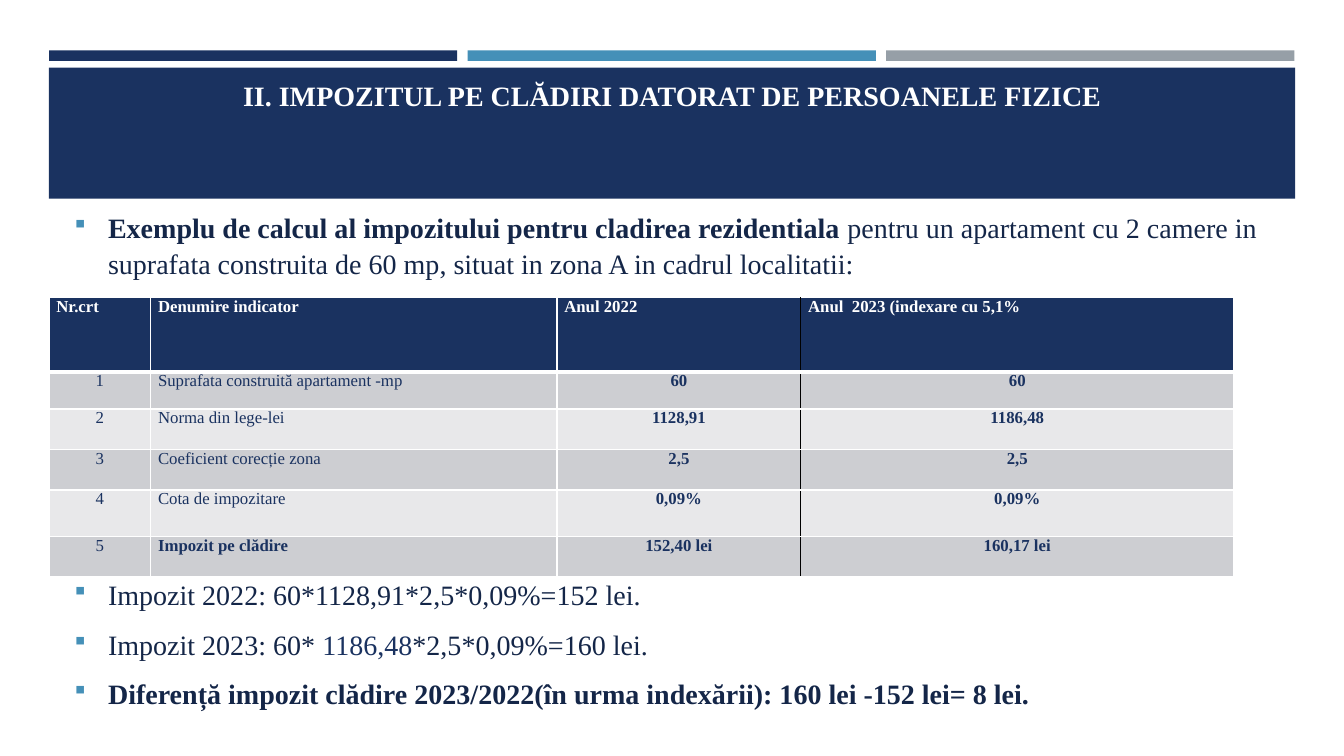
"""Builds a slide with a worked example of the residential building tax."""
from lxml.etree import SubElement
from pptx import Presentation
from pptx.dml.color import RGBColor
from pptx.enum.shapes import MSO_SHAPE as SHAPE
from pptx.enum.text import MSO_ANCHOR as ANCHOR, PP_ALIGN as ALIGN
from pptx.oxml.ns import qn
from pptx.util import Pt

FONT = "Times New Roman"
NAVY, BLUE, GREY, INK = "1A3260", "4590B8", "969FA7", "142648"
WHITE, BLACK = "FFFFFF", "000000"
BANDS = ["CDCED2", "E8E8EA"]

TITLE = [[("II. IMPOZITUL PE CLĂDIRI DATORAT DE PERSOANELE FIZICE", WHITE, True)]]
INTRO = [[
    ("Exemplu de calcul al impozitului pentru cladirea rezidentiala ", INK, True),
    ("pentru un apartament cu 2 camere in suprafata construita de 60 mp, "
     "situat in zona A in cadrul localitatii:", INK, False),
]]
RESULTS = [
    [("Impozit 2022: 60*1128,91*2,5*0,09%=152 lei.", INK, False)],
    [("Impozit 2023: 60* ", INK, False), ("1186,48", NAVY, False),
     ("*2,5*0,09%=160 lei.", INK, False)],
    [("Diferență impozit clădire 2023/2022(în urma indexării): "
      "160 lei -152 lei= 8 lei.", INK, True)],
]
ROWS = [
    ("Nr.crt", "Denumire indicator", "Anul 2022", "Anul  2023 (indexare cu 5,1%"),
    ("1", "Suprafata construită apartament -mp", "60", "60"),
    ("2", "Norma din lege-lei", "1128,91", "1186,48"),
    ("3", "Coeficient corecție zona", "2,5", "2,5"),
    ("4", "Cota de impozitare", "0,09%", "0,09%"),
    ("5", "Impozit pe clădire", "152,40 lei", "160,17 lei"),
]
COL_WIDTHS = [72.7, 290.2, 174.2, 309.2]
ROW_HEIGHTS = [53, 26.6, 29, 28.8, 33, 28.8]
LEFT, STRIP_WIDTH, STRIP_STEP = 35, 291.6, 299
TEXT_LEFT, TEXT_WIDTH = 46.1, 868.3


def rgb(color):
    return RGBColor.from_string(color)


def style(r, size, color, bold):
    r.font.name, r.font.size, r.font.bold = FONT, Pt(size), bold
    r.font.color.rgb = rgb(color)


def add_bar(s, left, top, width, height, color):
    sp = s.shapes.add_shape(SHAPE.RECTANGLE, Pt(left), Pt(top), Pt(width), Pt(height))
    sp.shadow.inherit = False
    sp.fill.solid()
    sp.fill.fore_color.rgb = rgb(color)
    sp.line.fill.background()


def add_bullet(p):
    pPr = p._p.get_or_add_pPr()
    pPr.set("marL", str(Pt(24)))
    pPr.set("indent", str(-Pt(24)))
    SubElement(SubElement(pPr, qn("a:buClr")), qn("a:srgbClr"), val=BLUE)
    SubElement(pPr, qn("a:buSzPct"), val="92000")
    SubElement(pPr, qn("a:buFont"), typeface="Wingdings")
    SubElement(pPr, qn("a:buChar"), char="§")


def add_text(s, top, height, paragraphs, bulleted=True):
    tf = s.shapes.add_textbox(Pt(TEXT_LEFT), Pt(top), Pt(TEXT_WIDTH), Pt(height)).text_frame
    tf.word_wrap = True
    for i, runs in enumerate(paragraphs):
        p = tf.add_paragraph() if i else tf.paragraphs[0]
        p.line_spacing, p.space_after = 1.06, Pt(10)
        if bulleted:
            add_bullet(p)
        else:
            p.alignment = ALIGN.CENTER
        for text, color, bold in runs:
            r = p.add_run()
            r.text = text
            style(r, 20, color, bold)


def add_border(cell, side, color, width):
    ln = SubElement(cell._tc.get_or_add_tcPr(), qn("a:ln" + side), w=str(Pt(width)))
    SubElement(SubElement(ln, qn("a:solidFill")), qn("a:srgbClr"), val=color)


def fill_cell(cell, row, col, text):
    header = row == 0
    cell.margin_left = cell.margin_right = Pt(5.2)
    cell.margin_top = cell.margin_bottom = 0
    cell.vertical_anchor = ANCHOR.TOP
    add_border(cell, "L", BLACK if col == 3 else WHITE, 1)
    add_border(cell, "R", BLACK if col == 2 else WHITE, 1)
    add_border(cell, "T", WHITE, 1)
    add_border(cell, "B", WHITE, 3 if header else 1)
    cell.fill.solid()
    cell.fill.fore_color.rgb = rgb(NAVY if header else BANDS[(row - 1) % 2])
    p = cell.text_frame.paragraphs[0]
    p.text = text
    p.alignment = ALIGN.JUSTIFY if header or col == 1 else ALIGN.CENTER
    total = row == len(ROWS) - 1 and col == 1
    style(p.runs[0], 12, WHITE if header else NAVY, header or col >= 2 or total)


def add_tax_table(s):
    table = s.shapes.add_table(len(ROWS), len(COL_WIDTHS), Pt(LEFT), Pt(212.6),
                               Pt(sum(COL_WIDTHS)), Pt(sum(ROW_HEIGHTS))).table
    for column, width in zip(table.columns, COL_WIDTHS):
        column.width = Pt(width)
    for row, (texts, height) in enumerate(zip(ROWS, ROW_HEIGHTS)):
        table.rows[row].height = Pt(height)
        for col, text in enumerate(texts):
            fill_cell(table.cell(row, col), row, col, text)


def main():
    prs = Presentation()
    prs.slide_width, prs.slide_height = Pt(960), Pt(540)
    s = prs.slides.add_slide(prs.slide_layouts[6])
    for i, color in enumerate([NAVY, BLUE, GREY]):
        add_bar(s, LEFT + i * STRIP_STEP, 36, STRIP_WIDTH, 7.5, color)
    add_bar(s, LEFT, 48.4, 890.2, 93.6, NAVY)
    add_text(s, 51.1, 80, TITLE, bulleted=False)
    add_text(s, 145.4, 60, INTRO)
    add_text(s, 407.5, 115, RESULTS)
    add_tax_table(s)
    prs.save("out.pptx")


if __name__ == "__main__":
    main()
